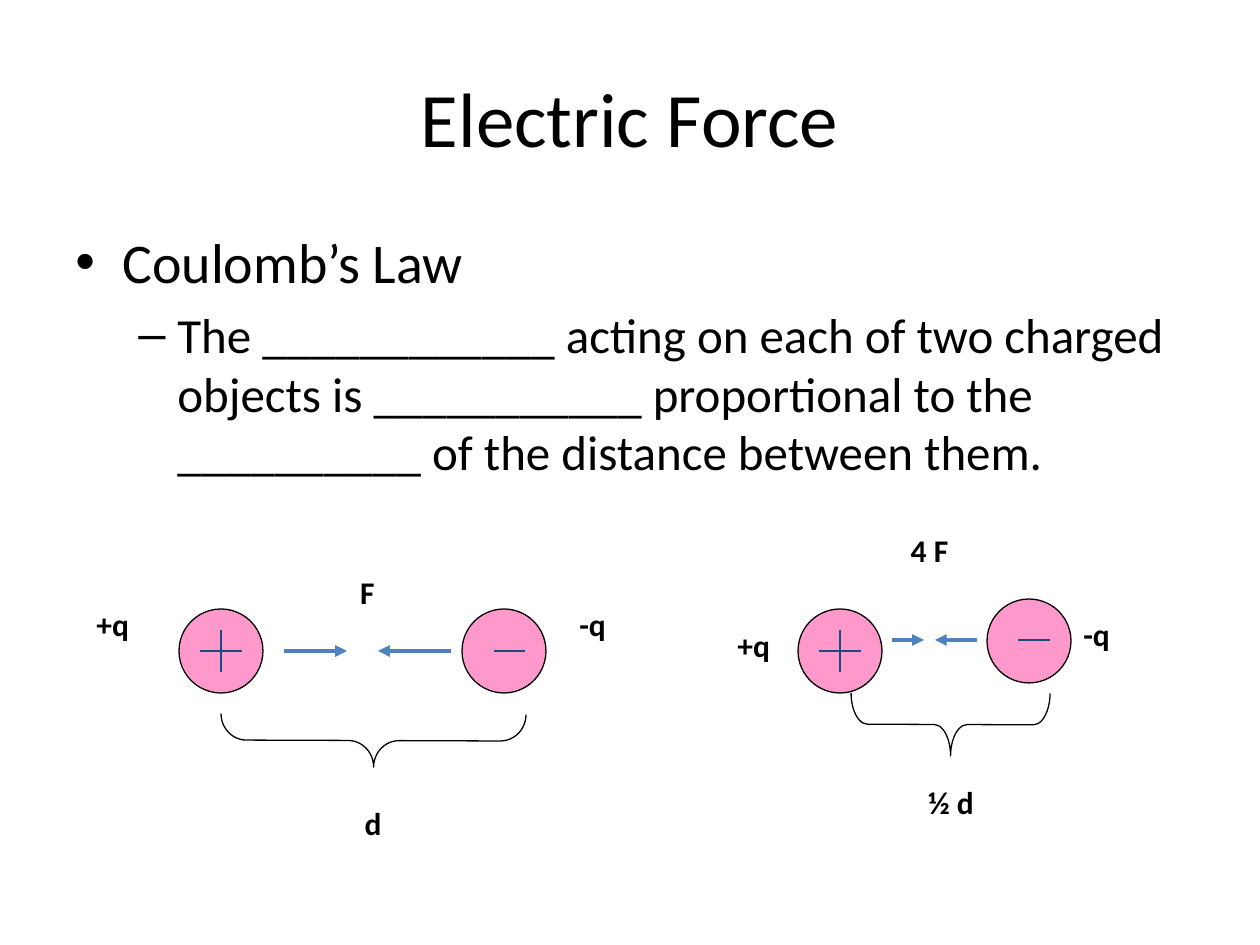
from lxml import etree
from pptx import Presentation
from pptx.dml.color import RGBColor
from pptx.enum.shapes import MSO_CONNECTOR, MSO_SHAPE
from pptx.enum.text import MSO_ANCHOR, PP_ALIGN
from pptx.oxml.ns import qn
from pptx.util import Pt

PX = 914400 / 126
OVAL, BRACE = MSO_SHAPE.OVAL, MSO_SHAPE.LEFT_BRACE
LINE = MSO_CONNECTOR.STRAIGHT
LEFT, MID = PP_ALIGN.LEFT, PP_ALIGN.CENTER
COLOR = RGBColor.from_string


def px(*nums):
    return [round(n * PX) for n in nums]


def write(para, text, size, bold=False, align=LEFT):
    para.alignment = align
    run = para.add_run()
    run.text = text
    look = {"name": "Calibri", "size": Pt(size), "bold": bold}
    for key, value in look.items():
        setattr(run.font, key, value)
    run.font.color.rgb = COLOR("000000")


prs = Presentation()
prs.slide_width, prs.slide_height = px(1260, 945)
slide = prs.slides.add_slide(prs.slide_layouts[5])
shapes = slide.shapes

title = shapes.title
title.left, title.top, title.width, title.height = px(63, 38, 1134, 157)
title.text_frame.vertical_anchor = MSO_ANCHOR.MIDDLE
write(title.text_frame.paragraphs[0], "Electric Force", 44, align=MID)

body = shapes.add_textbox(*px(63, 221, 1134, 623)).text_frame
body.word_wrap = True
points = [
    ("Coulomb’s Law", 32, "•", 47, 47),
    ("The ____________ acting on each of two charged objects is "
     "___________ proportional to the __________ of the distance "
     "between them.", 28, "–", 102, 39),
]
for level, (text, size, mark, left, hang) in enumerate(points):
    para = body.paragraphs[0] if level == 0 else body.add_paragraph()
    para.level = level
    para.space_before = Pt(size * 0.2)
    write(para, text, size)
    props = para._p.get_or_add_pPr()
    for key, value in zip(("marL", "indent"), px(left, -hang)):
        props.set(key, str(value))
    etree.SubElement(props, qn("a:buFont")).set("typeface", "Arial")
    etree.SubElement(props, qn("a:buChar")).set("char", mark)

forms = [
    (OVAL, 987, 599, 84, 84, []),
    (OVAL, 798, 609, 84, 84, []),
    (OVAL, 462, 609, 84, 84, []),
    (OVAL, 179, 609, 84, 84, []),
    (BRACE, 919, 625, 63, 199, [0.264, 0.501]),
    (BRACE, 347, 588, 53, 305, [0.483, 0.501]),
]
for kind, x, y, w, h, bends in forms:
    form = shapes.add_shape(kind, *px(x, y, w, h))
    form.shadow.inherit = False
    form.line.color.rgb = COLOR("000000")
    form.line.width = Pt(0.75)
    if kind == OVAL:
        form.fill.solid()
        form.fill.fore_color.rgb = COLOR("FF99CC")
    else:
        form.fill.background()
        form.rotation = 270.2
    for i, bend in enumerate(bends):
        form.adjustments[i] = bend

signs = [
    (840, 630, 840, 672), (819, 651, 861, 651), (1018, 640, 1050, 640),
    (221, 630, 221, 672), (200, 651, 242, 651), (494, 651, 525, 651),
]
forces = [
    (892, 640, 924, 640), (977, 640, 935, 640),
    (284, 651, 347, 651), (451, 651, 378, 651),
]
for rows, hue, width in ((signs, "1F497D", 0.75), (forces, "4F81BD", 2.25)):
    for ends in rows:
        line = shapes.add_connector(LINE, *px(*ends))
        line.line.color.rgb = COLOR(hue)
        line.line.width = Pt(width)
        if rows is forces:
            tip = etree.SubElement(line.line._get_or_add_ln(), qn("a:tailEnd"))
            tip.set("type", "triangle")
        etree.SubElement(line._element.spPr, qn("a:effectLst"))

labels = [
    ("½ d", 872, 777, 158, MID), ("+q", 725, 620, 84, LEFT),
    ("-q", 1071, 609, 126, LEFT), ("4 F", 882, 525, 95, MID),
    ("d", 294, 798, 158, MID), ("+q", 84, 599, 84, LEFT),
    ("-q", 567, 599, 126, LEFT), ("F", 336, 567, 63, MID),
]
for text, x, y, w, align in labels:
    frame = shapes.add_textbox(*px(x, y, w, 63)).text_frame
    frame.word_wrap = True
    write(frame.paragraphs[0], text, 18, True, align)

prs.save("out.pptx")
